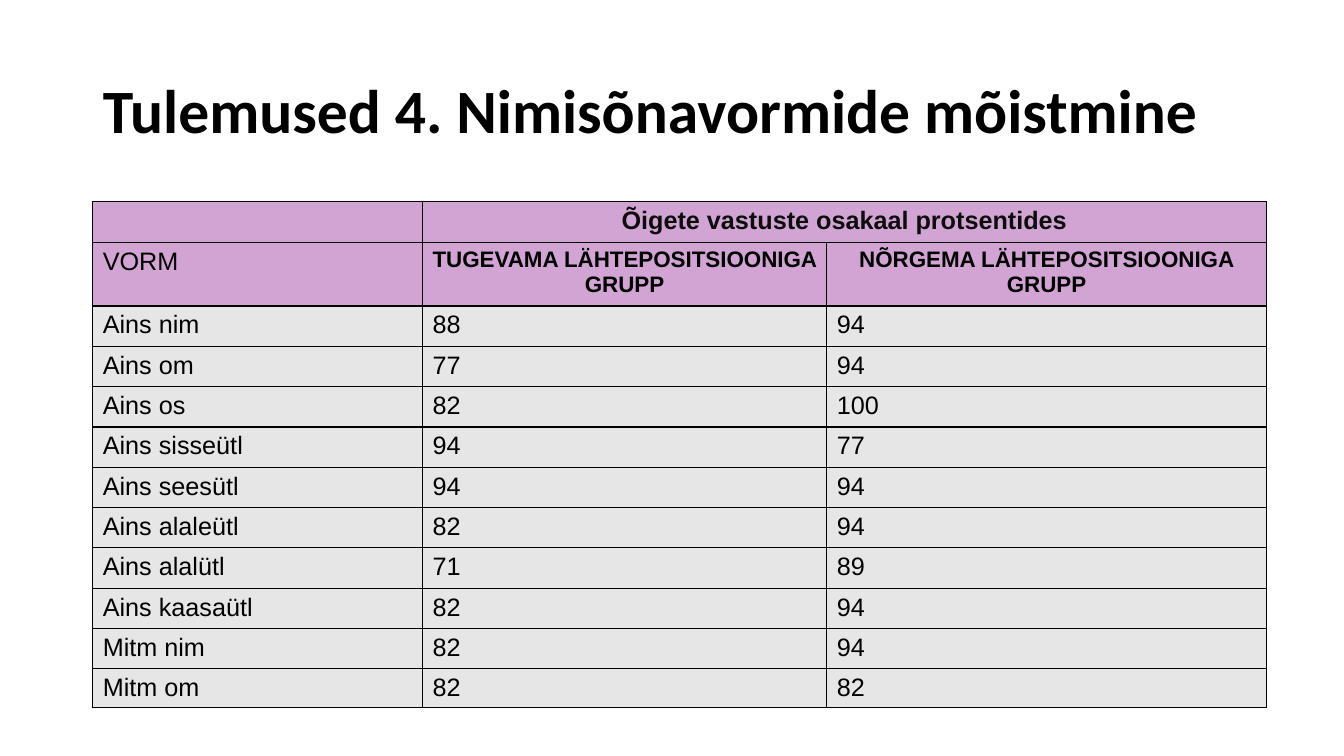
from lxml import etree
from pptx import Presentation
from pptx import util as u
from pptx.dml.color import RGBColor
from pptx.enum import text
from pptx.oxml.ns import qn

HEADER_FILL = "D2A4D4"
BODY_FILL = "E7E6E6"
BLACK = "000000"
COLUMN_WIDTHS = [3.27, 4.01, 4.36]
ROW_HEIGHTS = [0.4, 0.63] + [0.4] * 9 + [0.38]
GROUPS = ["TUGEVAMA LÄHTEPOSITSIOONIGA GRUPP", "NÕRGEMA LÄHTEPOSITSIOONIGA GRUPP"]
RESULTS = [
    ("Ains nim", 88, 94),
    ("Ains om", 77, 94),
    ("Ains os", 82, 100),
    ("Ains sisseütl", 94, 77),
    ("Ains seesütl", 94, 94),
    ("Ains alaleütl", 82, 94),
    ("Ains alalütl", 71, 89),
    ("Ains kaasaütl", 82, 94),
    ("Mitm nim", 82, 94),
    ("Mitm om", 82, 82),
]


def rgb(value):
    """Turn a hex string into a colour."""
    return RGBColor.from_string(value)


def add_run(paragraph, words, size, font, color=BLACK, bold=False):
    """Add one formatted run to a paragraph."""
    run = paragraph.add_run()
    run.text = words
    run.font.size = u.Pt(size)
    run.font.name = font
    run.font.bold = bold
    run.font.color.rgb = rgb(color)


def set_title(slide, words):
    """Place and fill the title placeholder."""
    title = slide.shapes.title
    title.left, title.top = u.Inches(0.92), u.Inches(0.4)
    title.width, title.height = u.Inches(11.5), u.Inches(1.45)
    frame = title.text_frame
    frame.word_wrap = True
    frame.auto_size = text.MSO_AUTO_SIZE.NONE
    frame.vertical_anchor = text.MSO_ANCHOR.MIDDLE
    paragraph = frame.paragraphs[0]
    paragraph.alignment = text.PP_ALIGN.LEFT
    paragraph.line_spacing = 0.9
    add_run(paragraph, words, 44, "Calibri", bold=True)


def style_cell(cell, fill):
    """Give a cell thin black borders and a solid fill."""
    properties = cell._tc.get_or_add_tcPr()
    for side in ("a:lnL", "a:lnR", "a:lnT", "a:lnB"):
        line = etree.SubElement(properties, qn(side), w=str(u.Pt(0.96)))
        solid = etree.SubElement(line, qn("a:solidFill"))
        etree.SubElement(solid, qn("a:srgbClr"), val=BLACK)
    cell.fill.solid()
    cell.fill.fore_color.rgb = rgb(fill)


def write_cell(cell, words, size=18, color=BLACK, heading=False):
    """Write a cell's text, bold and centred for a heading."""
    paragraph = cell.text_frame.paragraphs[0]
    paragraph.alignment = text.PP_ALIGN.CENTER if heading else text.PP_ALIGN.LEFT
    add_run(paragraph, words, size, "Arial", color, heading)


def add_results_table(slide):
    """Add the table of correct answers by noun form and group."""
    frame = slide.shapes.add_table(
        len(ROW_HEIGHTS), len(COLUMN_WIDTHS), u.Inches(0.92), u.Inches(2),
        u.Inches(sum(COLUMN_WIDTHS)), u.Inches(sum(ROW_HEIGHTS)))
    table = frame.table
    for column, width in zip(table.columns, COLUMN_WIDTHS):
        column.width = u.Inches(width)
    for index, (row, height) in enumerate(zip(table.rows, ROW_HEIGHTS)):
        row.height = u.Inches(height)
        for cell in row.cells:
            style_cell(cell, HEADER_FILL if index < 2 else BODY_FILL)

    table.cell(0, 1).merge(table.cell(0, 2))
    write_cell(table.cell(0, 1), "Õigete vastuste osakaal protsentides",
               color="0D0D0D", heading=True)
    write_cell(table.cell(1, 0), "VORM")
    for column, group in enumerate(GROUPS, start=1):
        write_cell(table.cell(1, column), group, size=16, heading=True)
    for row, result in enumerate(RESULTS, start=2):
        for column, value in enumerate(result):
            write_cell(table.cell(row, column), str(value))


def main():
    """Build and save the slide."""
    presentation = Presentation()
    presentation.slide_width = u.Inches(13.33)
    presentation.slide_height = u.Inches(7.5)
    slide = presentation.slides.add_slide(presentation.slide_layouts[5])
    set_title(slide, "Tulemused 4. Nimisõnavormide mõistmine")
    add_results_table(slide)
    presentation.save("out.pptx")


if __name__ == "__main__":
    main()
